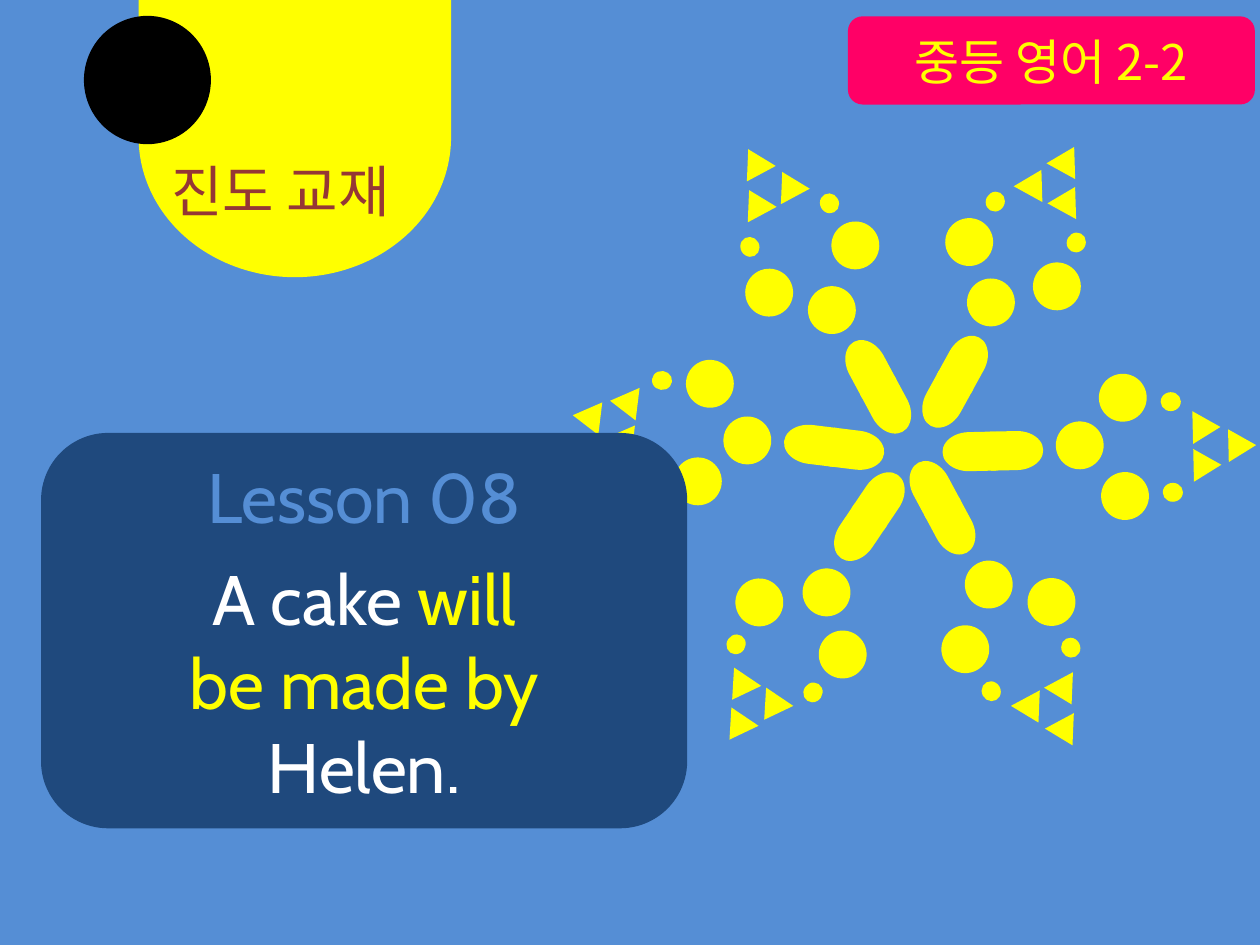
from math import cos, radians, sin

from lxml import etree
from pptx import Presentation
from pptx.dml.color import RGBColor
from pptx.enum import shapes, text
from pptx.oxml.ns import qn
from pptx.util import Inches, Pt

SKY = RGBColor(0x55, 0x8E, 0xD5)
NAVY = RGBColor(0x1F, 0x49, 0x7D)
YELLOW = RGBColor(0xFF, 0xFF, 0x00)
PINK = RGBColor(0xFF, 0x00, 0x66)
BROWN = RGBColor(0x95, 0x37, 0x35)
WHITE = RGBColor(0xFF, 0xFF, 0xFF)
BLACK = RGBColor(0x00, 0x00, 0x00)

LATIN, KOREAN = "Cabin", "Noto Sans CJK KR"
KIND = shapes.MSO_SHAPE

# Parts of a petal: kind, width, height, turn, (distance outward, distance sideways)
PETAL_PARTS = [
    (KIND.ISOSCELES_TRIANGLE, 0.26, 0.22, 0, [(1.98, 0), (1.7, 0.15), (1.7, -0.15)]),
    (KIND.OVAL, 0.15, 0.16, 0, [(1.42, 0.36), (1.42, -0.36)]),
    (KIND.FLOWCHART_DELAY, 0.42, 0.31, 90, [(-0.19, 0)]),
    (KIND.FLOWCHART_DELAY, 0.42, 0.31, -90, [(0.19, 0)]),
    (KIND.OVAL, 0.38, 0.38, 0, [(1.04, 0.38), (1.04, -0.4), (0.69, -0.03)]),
]
# Petals: centre of the stem, rotation, lean of the parts, outward stretch
PETALS = [
    (6.97, 3.07, 331.8, -0.5, 1.03),
    (7.48, 4.03, 151.8, -0.5, 1.03),
    (6.9, 4.1, 214, -2, 1),
    (6.62, 3.55, 277, 0, 1),
    (7.58, 3.03, 28.8, -2, 1),
    (7.88, 3.58, 88.7, 0, 1),
]


def add_shape(s, kind, box, fill, line=None, rotation=0):
    sp = s.shapes.add_shape(kind, *map(Inches, box))
    sp.shadow.inherit = False
    sp.rotation = rotation % 360
    sp.fill.solid()
    sp.fill.fore_color.rgb = fill
    if line is None:
        sp.line.fill.background()
    else:
        sp.line.color.rgb = line
        sp.line.width = Pt(2)
    return sp


def add_run(p, words, size, color, font):
    r = p.add_run()
    r.text = words
    for name, value in {"name": font, "size": Pt(size), "bold": False}.items():
        setattr(r.font, name, value)
    r.font.color.rgb = color
    etree.SubElement(r._r.get_or_add_rPr(), qn("a:ea"), typeface=KOREAN)


def add_course_badge(s, box):
    sp = add_shape(s, KIND.FLOWCHART_ALTERNATE_PROCESS, box, PINK)
    tf = sp.text_frame
    tf.vertical_anchor = text.MSO_ANCHOR.MIDDLE
    p = tf.paragraphs[0]
    p.alignment = text.PP_ALIGN.CENTER
    add_run(p, "중등 영어 2-2", 28, YELLOW, KOREAN)


def add_petal(s, x, y, rotation, lean, stretch):
    for kind, w, h, turn, places in PETAL_PARTS:
        # The stem keeps to the petal's own axis
        angle = radians(rotation if turn else rotation + lean)
        for out, side in places:
            if (rotation, out, side) == (277, 1.42, -0.36):
                continue  # this petal has a single dot
            out *= stretch
            cx = x + out * sin(angle) + side * cos(angle)
            cy = y - out * cos(angle) + side * sin(angle)
            box = (cx - w / 2, cy - h / 2, w, h)
            add_shape(s, kind, box, YELLOW, rotation=rotation + turn)


def add_lesson_panel(s, box):
    add_shape(s, KIND.ROUNDED_RECTANGLE, box, NAVY, NAVY)
    title = s.shapes.title
    title.left, title.top, title.width, title.height = map(Inches, box)
    s.shapes._spTree.append(title._element)  # in front of the panel

    tf = title.text_frame
    for name, value in {"word_wrap": True, "auto_size": text.MSO_AUTO_SIZE.NONE,
                        "vertical_anchor": text.MSO_ANCHOR.MIDDLE}.items():
        setattr(tf, name, value)
    lines = [
        [("Lesson 08", SKY)],
        [("A cake ", WHITE), ("will", YELLOW)],
        [("be made by", YELLOW)],
        [("Helen.", WHITE)],
    ]
    for i, runs in enumerate(lines):
        p = tf.add_paragraph() if i else tf.paragraphs[0]
        p.alignment = text.PP_ALIGN.CENTER
        p.space_before = Pt(10 if i == 1 else 0)
        for words, color in runs:
            add_run(p, words, 40, color, LATIN)


def add_book_tab(s, box):
    x, y, w, h = box
    # The shape is turned a quarter, so its sides swap about the centre
    turned = (x + (w - h) / 2, y + (h - w) / 2, h, w)
    add_shape(s, KIND.FLOWCHART_DELAY, turned, YELLOW, rotation=90)
    label = (x + 0.16, y + 1.21, 2.32, 1.18)
    tf = s.shapes.add_textbox(*map(Inches, label)).text_frame
    tf.word_wrap = True
    add_run(tf.paragraphs[0], "진도 교재", 32, BROWN, LATIN)


def main():
    prs = Presentation()
    prs.slide_width, prs.slide_height = Inches(10), Inches(7.5)
    s = prs.slides.add_slide(prs.slide_layouts[5])
    s.background.fill.solid()
    s.background.fill.fore_color.rgb = SKY

    add_course_badge(s, (6.73, 0.13, 3.23, 0.7))
    for petal in PETALS:
        add_petal(s, *petal)
    add_lesson_panel(s, (0.34, 3.45, 5.1, 3.11))
    add_book_tab(s, (1.1, -0.02, 2.48, 2.22))
    # Plain disc on the corner of the tab
    add_shape(s, KIND.OVAL, (0.68, 0.14, 0.98, 0.99), BLACK, BLACK)
    prs.save("out.pptx")


if __name__ == "__main__":
    main()
